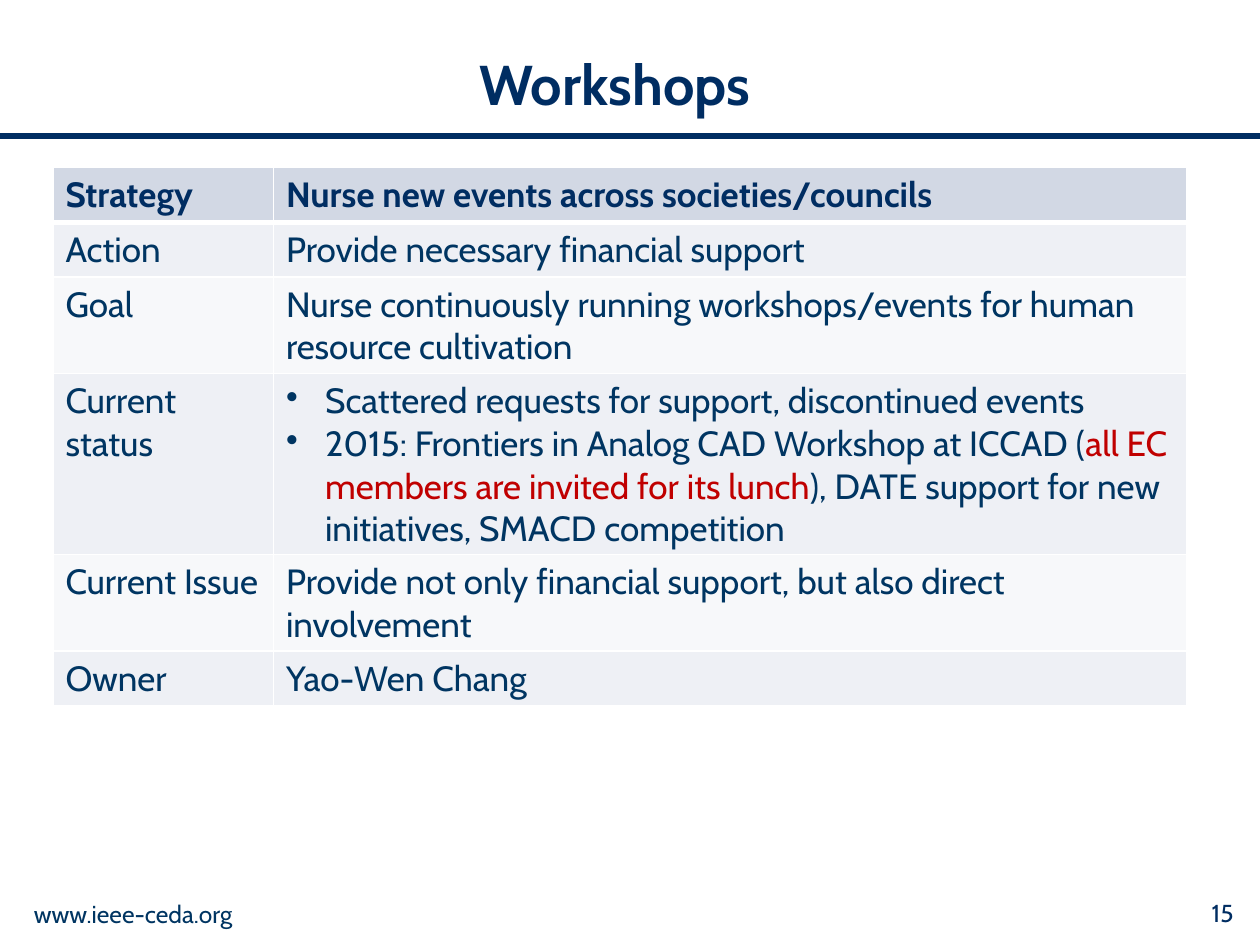
import pptx
import pptx.util
import pptx.dml.color
import pptx.enum.text
import pptx.enum.shapes
import pptx.oxml
import pptx.oxml.ns
from lxml import etree

Inches = pptx.util.Inches
Pt = pptx.util.Pt
Align = pptx.enum.text.PP_ALIGN
Middle = pptx.enum.text.MSO_ANCHOR.MIDDLE

THEME = {
    "font": "Cabin",
    "navy": "002D62", "ink": "003562", "alert": "C00000",
    "head": "D2D8E4", "bands": ("EEF0F5", "F7F8FA"), "edge": "FFFFFF",
    "title": 32, "body": 20, "foot": 14,
}

# A cell is a string, or a list of bullets; a bullet is a list of (text, colour).
ROWS = [
    ("Strategy", "Nurse new events across societies/councils"),
    ("Action", "Provide necessary financial support"),
    ("Goal", "Nurse continuously running workshops/events for human "
             "resource cultivation"),
    ("Current status", [
        [("Scattered requests for support, discontinued events", "ink")],
        [("2015: Frontiers in Analog CAD Workshop at ICCAD (", "ink"),
         ("all EC members are invited for its lunch", "alert"),
         ("), DATE support for new initiatives, SMACD competition", "ink")],
    ]),
    ("Current Issue", "Provide not only financial support, but also direct "
                      "involvement"),
    ("Owner", "Yao-Wen Chang"),
]
WIDTHS = (1.75, 7.25)
HEIGHTS = (0.41, 0.41, 0.41, 1.43, 0.41, 0.41)


def color(name):
    return pptx.dml.color.RGBColor.from_string(THEME.get(name, name))


def add_run(para, text, size, tint, bold=False):
    run = para.add_run()
    run.text = text
    look = {"name": THEME["font"], "size": Pt(THEME[size]), "bold": bold}
    for key, value in look.items():
        setattr(run.font, key, value)
    run.font.color.rgb = color(tint)


def place(shape, box):
    for key, value in zip(("left", "top", "width", "height"), box):
        setattr(shape, key, Inches(value))


def add_title(slide, box, text):
    title = slide.shapes.title
    place(title, box)
    frame = title.text_frame
    frame.vertical_anchor = Middle
    para = frame.paragraphs[0]
    para.alignment = Align.CENTER
    add_run(para, text, "title", "navy", True)


def add_rule(slide, left, right, top):
    line = slide.shapes.add_connector(
        pptx.enum.shapes.MSO_CONNECTOR.STRAIGHT,
        Inches(left), Inches(top), Inches(right), Inches(top))
    line.line.color.rgb = color("navy")
    line.line.width = Pt(3)
    etree.SubElement(line.element.spPr, pptx.oxml.ns.qn("a:effectLst"))


def add_foot(slide, box, text, tint, align):
    frame = slide.shapes.add_textbox(*map(Inches, box)).text_frame
    frame.word_wrap = True
    frame.vertical_anchor = Middle
    para = frame.paragraphs[0]
    para.alignment = align
    add_run(para, text, "foot", tint)


def add_edges(cell, base):
    """Draw the four borders of a cell; base is the width of the lower one."""
    props = cell._tc.get_or_add_tcPr()
    sides = {"L": 1, "R": 1, "T": 1, "B": base}
    for spot, (side, width) in enumerate(sides.items()):
        props.insert(spot, pptx.oxml.parse_xml(
            f'<a:ln{side} {pptx.oxml.ns.nsdecls("a")} w="{Pt(width)}">'
            f'<a:solidFill><a:srgbClr val="{THEME["edge"]}"/></a:solidFill>'
            f'</a:ln{side}>'))


def add_bullet(para):
    props = para._p.get_or_add_pPr()
    props.set("marL", str(Inches(0.31)))
    props.set("indent", str(-Inches(0.31)))
    mark = etree.SubElement(props, pptx.oxml.ns.qn("a:buChar"))
    mark.set("char", "•")


def fill_cell(cell, content, head):
    frame = cell.text_frame
    if isinstance(content, str):
        add_run(frame.paragraphs[0], content, "body",
                "navy" if head else "ink", head)
        return
    for index, parts in enumerate(content):
        para = frame.add_paragraph() if index else frame.paragraphs[0]
        add_bullet(para)
        for text, tint in parts:
            add_run(para, text, "body", tint)


def add_grid(slide, box):
    grid = slide.shapes.add_table(
        len(ROWS), len(WIDTHS), *map(Inches, box)).table
    for column, width in zip(grid.columns, WIDTHS):
        column.width = Inches(width)
    for r, row in enumerate(ROWS):
        grid.rows[r].height = Inches(HEIGHTS[r])
        head = r == 0
        shade = THEME["head"] if head else THEME["bands"][(r - 1) % 2]
        for c, content in enumerate(row):
            cell = grid.cell(r, c)
            cell.fill.solid()
            cell.fill.fore_color.rgb = color(shade)
            add_edges(cell, 3 if head else 1)
            fill_cell(cell, content, head)


def main():
    deck = pptx.Presentation()
    deck.slide_width, deck.slide_height = Inches(10), Inches(7.5)
    slide = deck.slides.add_slide(deck.slide_layouts[5])
    add_rule(slide, 0, 10, 1.08)
    add_title(slide, (0.58, 0.16, 8.6, 1), "Workshops")
    add_foot(slide, (8.92, 7.08, 0.97, 0.33), "15", "navy", Align.RIGHT)
    add_foot(slide, (0.17, 7.08, 2.33, 0.35), "www.ieee-ceda.org", "ink",
             Align.LEFT)
    add_grid(slide, (0.42, 1.33, 9, 4.27))
    deck.save("out.pptx")


if __name__ == "__main__":
    main()
